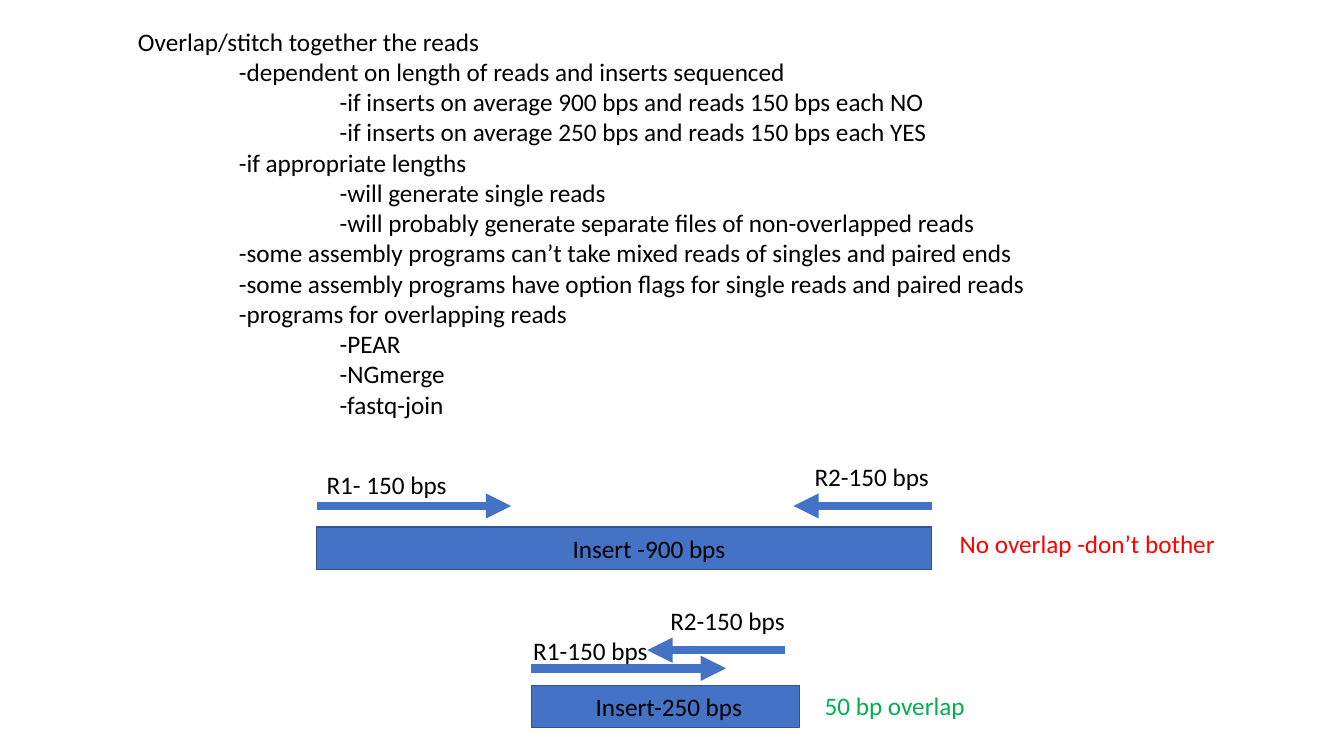
from dataclasses import dataclass

from lxml.etree import SubElement
from pptx import Presentation
from pptx.dml.color import RGBColor as Color
from pptx.enum.shapes import MSO_CONNECTOR as Connector, MSO_SHAPE as Shape
from pptx.enum.text import MSO_AUTO_SIZE as AutoSize
from pptx.oxml.ns import qn
from pptx.shapes.shapetree import GroupShapes, SlideShapes
from pptx.text.text import _Paragraph as Paragraph
from pptx.util import Inches, Pt


@dataclass(frozen=True)
class Theme:
    font: str = "Calibri"
    text_size: float = 18
    arrow_width: float = 6
    border_width: float = 1
    text: str = "000000"
    blue: str = "4472C4"
    border: str = "325491"
    warning: str = "FF0000"
    success: str = "00B050"


THEME = Theme()
LABEL_HEIGHT = 0.4
INSERT_HEIGHT = 0.42
INDENT = 1


@dataclass(frozen=True)
class Label:
    text: str
    left: float
    top: float
    width: float
    color: str = THEME.text
    wrap: bool = False


@dataclass(frozen=True)
class Read:
    start: float
    end: float
    y: float


@dataclass(frozen=True)
class Insert:
    left: float
    top: float
    width: float


@dataclass(frozen=True)
class Diagram:
    reads: tuple[Read, ...]
    insert: Insert
    labels: tuple[Label, ...]


# Outline: indent level and wording
OUTLINE: tuple[tuple[int, str], ...] = (
    (0, "Overlap/stitch together the reads"),
    (1, "-dependent on length of reads and inserts sequenced"),
    (2, "-if inserts on average 900 bps and reads 150 bps each NO"),
    (2, "-if inserts on average 250 bps and reads 150 bps each YES"),
    (1, "-if appropriate lengths"),
    (2, "-will generate single reads"),
    (2, "-will probably generate separate files of non-overlapped reads"),
    (1, "-some assembly programs can’t take mixed reads of singles and paired ends"),
    (1, "-some assembly programs have option flags for single reads and paired reads"),
    (1, "-programs for overlapping reads"),
    (2, "-PEAR"),
    (2, "-NGmerge"),
    (2, "-fastq-join"),
)

DIAGRAMS = (
    Diagram(
        reads=(Read(3.14, 5.07, 5.02), Read(9.24, 7.87, 5.02)),
        insert=Insert(3.14, 5.23, 6.1),
        labels=(
            Label("R1- 150 bps", 3.14, 4.61, 1.41),
            Label("R2-150 bps", 7.98, 4.53, 1.35),
            Label("Insert -900 bps", 5.58, 5.24, 1.92, wrap=True),
        ),
    ),
    Diagram(
        reads=(Read(5.27, 7.2, 6.63), Read(7.79, 6.42, 6.45)),
        insert=Insert(5.27, 6.8, 2.66),
        labels=(
            Label("R1-150 bps", 5.19, 6.25, 1.35),
            Label("R2-150 bps", 6.55, 5.96, 1.35),
            Label("Insert-250 bps", 5.81, 6.81, 1.67),
        ),
    ),
)

VERDICTS = (
    Label("No overlap -don’t bother", 9.42, 5.19, 2.76, THEME.warning),
    Label("50 bp overlap", 8.08, 6.8, 1.61, THEME.success),
)


def add_text(paragraph: Paragraph, text: str, color: str) -> None:
    run = paragraph.add_run()
    run.text = text
    run.font.name = THEME.font
    run.font.size = Pt(THEME.text_size)
    run.font.color.rgb = Color.from_string(color)


def draw_outline(shapes: SlideShapes) -> None:
    box = shapes.add_textbox(Inches(1.27), Inches(0.21), Inches(10.29), Inches(4.04))
    frame = box.text_frame
    frame.word_wrap = True
    frame.auto_size = AutoSize.SHAPE_TO_FIT_TEXT
    for index, (level, text) in enumerate(OUTLINE):
        paragraph = frame.add_paragraph() if index else frame.paragraphs[0]
        paragraph.level = level
        properties = paragraph._p.get_or_add_pPr()
        properties.set("marL", str(Inches(level * INDENT)))
        properties.set("indent", "0")
        add_text(paragraph, text, THEME.text)


def draw_label(shapes: SlideShapes | GroupShapes, label: Label) -> None:
    box = shapes.add_textbox(
        Inches(label.left), Inches(label.top), Inches(label.width), Inches(LABEL_HEIGHT)
    )
    frame = box.text_frame
    frame.word_wrap = label.wrap
    frame.auto_size = AutoSize.SHAPE_TO_FIT_TEXT
    add_text(frame.paragraphs[0], label.text, label.color)


def draw_read(shapes: GroupShapes, read: Read) -> None:
    arrow = shapes.add_connector(
        Connector.STRAIGHT,
        Inches(read.start), Inches(read.y), Inches(read.end), Inches(read.y),
    )
    arrow.line.color.rgb = Color.from_string(THEME.blue)
    arrow.line.width = Pt(THEME.arrow_width)
    # Arrowhead at the end, no shadow
    SubElement(arrow.line._get_or_add_ln(), qn("a:tailEnd"), type="triangle")
    SubElement(arrow._element.spPr, qn("a:effectLst"))


def draw_insert(shapes: GroupShapes, insert: Insert) -> None:
    bar = shapes.add_shape(
        Shape.RECTANGLE,
        Inches(insert.left), Inches(insert.top), Inches(insert.width), Inches(INSERT_HEIGHT),
    )
    bar.shadow.inherit = False
    bar.fill.solid()
    bar.fill.fore_color.rgb = Color.from_string(THEME.blue)
    bar.line.color.rgb = Color.from_string(THEME.border)
    bar.line.width = Pt(THEME.border_width)


def draw_diagram(shapes: SlideShapes, diagram: Diagram) -> None:
    group = shapes.add_group_shape()
    for read in diagram.reads:
        draw_read(group.shapes, read)
    draw_insert(group.shapes, diagram.insert)
    for label in diagram.labels:
        draw_label(group.shapes, label)


def main() -> None:
    presentation = Presentation()
    presentation.slide_width = Inches(13.33)
    presentation.slide_height = Inches(7.5)
    slide = presentation.slides.add_slide(presentation.slide_layouts[6])

    draw_outline(slide.shapes)
    for diagram in DIAGRAMS:
        draw_diagram(slide.shapes, diagram)
    for verdict in VERDICTS:
        draw_label(slide.shapes, verdict)

    presentation.save("out.pptx")


if __name__ == "__main__":
    main()
